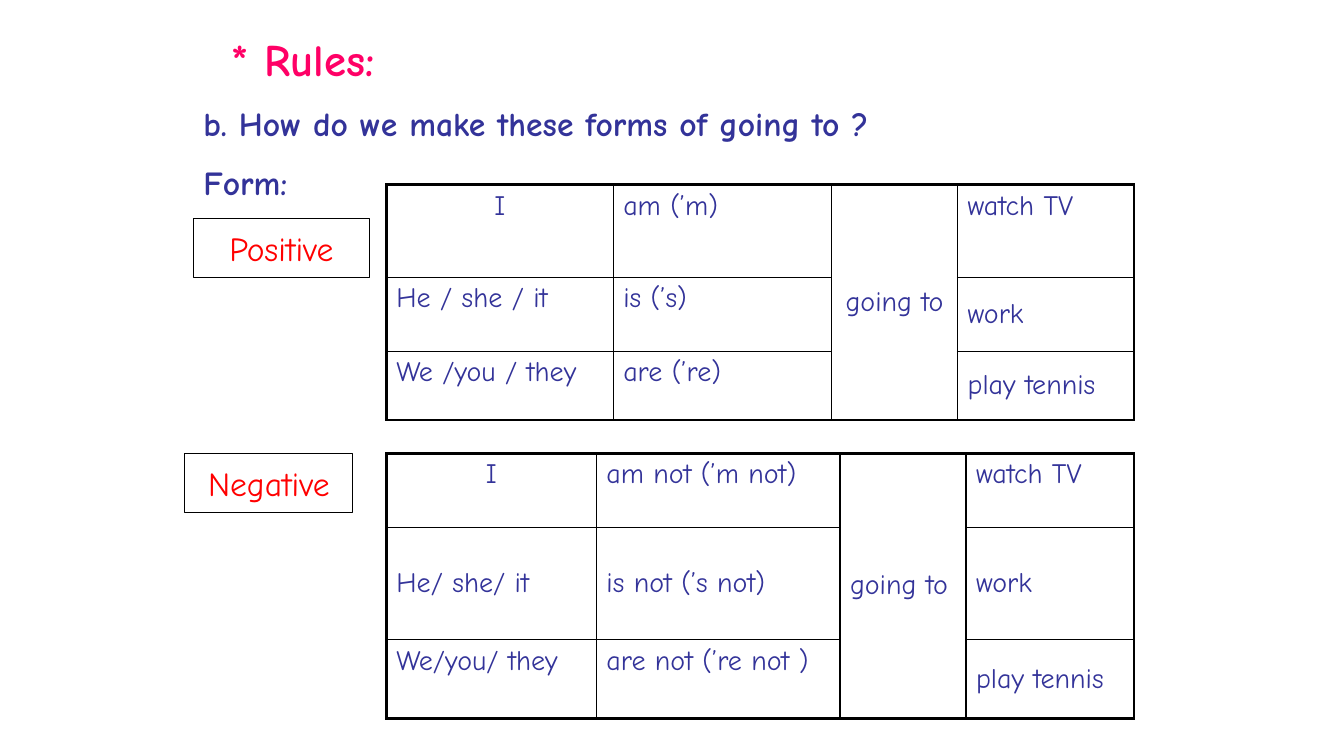
from lxml.etree import SubElement
from pptx import Presentation
from pptx.dml.color import RGBColor
from pptx.enum.shapes import MSO_SHAPE as Shape
from pptx.enum.text import MSO_ANCHOR as Anchor, MSO_AUTO_SIZE as AutoSize, PP_ALIGN as Align
from pptx.oxml.ns import qn
from pptx.util import Pt

COLORS = {"line": "000000", "rules": "FF0066", "text": "333399", "label": "FF0000"}
THICK, THIN = 2.25, 1
GOING_TO = 2


def add_run(paragraph, text, size, color, bold=False):
    run = paragraph.add_run()
    run.text = text
    run.font.name = "Comic Neue"
    run.font.size = Pt(size)
    run.font.bold = bold
    run.font.color.rgb = RGBColor.from_string(COLORS[color])


def add_border(cell, side, width):
    border = SubElement(cell._tc.get_or_add_tcPr(), qn(f"a:ln{side}"), w=str(Pt(width)))
    fill = SubElement(border, qn("a:solidFill"))
    SubElement(fill, qn("a:srgbClr"), val=COLORS["line"])


prs = Presentation()
prs.slide_width, prs.slide_height = Pt(960), Pt(540)
slide = prs.slides.add_slide(prs.slide_layouts[1])

rules = slide.shapes.title
rules.left, rules.top, rules.width, rules.height = Pt(158), Pt(19), Pt(568), Pt(46)
rules.text_frame.vertical_anchor = Anchor.TOP
rules.text_frame.auto_size = AutoSize.NONE
heading = rules.text_frame.paragraphs[0]
heading.alignment = Align.LEFT
add_run(heading, "* Rules:", 32, "rules", True)

question = slide.placeholders[1]
question.left, question.top, question.width, question.height = Pt(138), Pt(70), Pt(588), Pt(78)
question.text_frame.auto_size = AutoSize.NONE
for index, line in enumerate(["b. How do we make these forms of going to ?", "Form:"]):
    paragraph = question.text_frame.paragraphs[0] if index == 0 else question.text_frame.add_paragraph()
    properties = paragraph._p.get_or_add_pPr()
    properties.set("marL", "0")
    properties.set("indent", "0")
    SubElement(properties, qn("a:buNone"))
    paragraph.space_before = Pt(13 * index)
    add_run(paragraph, line, 24, "text", True)

forms = [
    {
        "label": "Positive", "label_box": (138, 156, 126, 42),
        "top": 132, "columns": [162, 156, 90, 126], "rows": [66, 53, 49],
        "middle_rows": [], "centered": [(0, 0), (0, GOING_TO)],
        "words": [
            ["I", "am (’m)", "going to", "watch TV"],
            ["He / she / it", "is (’s)", "", "work"],
            ["We /you / they", "are (’re)", "", "play tennis"],
        ],
    },
    {
        "label": "Negative", "label_box": (132, 324, 120, 42),
        "top": 324, "columns": [150, 174, 90, 120], "rows": [53, 80, 56],
        "middle_rows": [1], "centered": [(0, 0)],
        "words": [
            ["I", "am not (’m not)", "going to", "watch TV"],
            ["He/ she/ it", "is not (’s not)", "", "work"],
            ["We/you/ they", "are not (’re not )", "", "play tennis"],
        ],
    },
]

for form in forms:
    columns, rows = form["columns"], form["rows"]
    frame = slide.shapes.add_table(
        len(rows), len(columns), Pt(276), Pt(form["top"]), Pt(sum(columns)), Pt(sum(rows)))
    table = frame.table
    table.first_row = table.horz_banding = False
    for column, width in zip(table.columns, columns):
        column.width = Pt(width)
    for row, height in zip(table.rows, rows):
        row.height = Pt(height)
    last_row, last_column = len(rows) - 1, len(columns) - 1
    table.cell(0, GOING_TO).merge(table.cell(last_row, GOING_TO))

    for r, row_words in enumerate(form["words"]):
        for c, words in enumerate(row_words):
            cell = table.cell(r, c)
            outer = {"L": c == 0, "R": c == last_column, "T": r == 0,
                     "B": r == last_row or c == GOING_TO}
            for side, is_outer in outer.items():
                add_border(cell, side, THICK if is_outer else THIN)
            cell.fill.background()
            in_middle = c == GOING_TO or (c == last_column and r > 0) or r in form["middle_rows"]
            cell.vertical_anchor = Anchor.MIDDLE if in_middle else Anchor.TOP
            if words:
                paragraph = cell.text_frame.paragraphs[0]
                paragraph.alignment = Align.CENTER if (r, c) in form["centered"] else Align.LEFT
                add_run(paragraph, words, 20, "text")

    label = slide.shapes.add_shape(Shape.RECTANGLE, *map(Pt, form["label_box"]))
    label.shadow.inherit = False
    label.fill.background()
    label.line.color.rgb = RGBColor.from_string(COLORS["line"])
    label.line.width = Pt(0.75)
    label.text_frame.word_wrap = False
    label.text_frame.vertical_anchor = Anchor.MIDDLE
    label.text_frame.paragraphs[0].alignment = Align.CENTER
    add_run(label.text_frame.paragraphs[0], form["label"], 24, "label")

prs.save("out.pptx")
